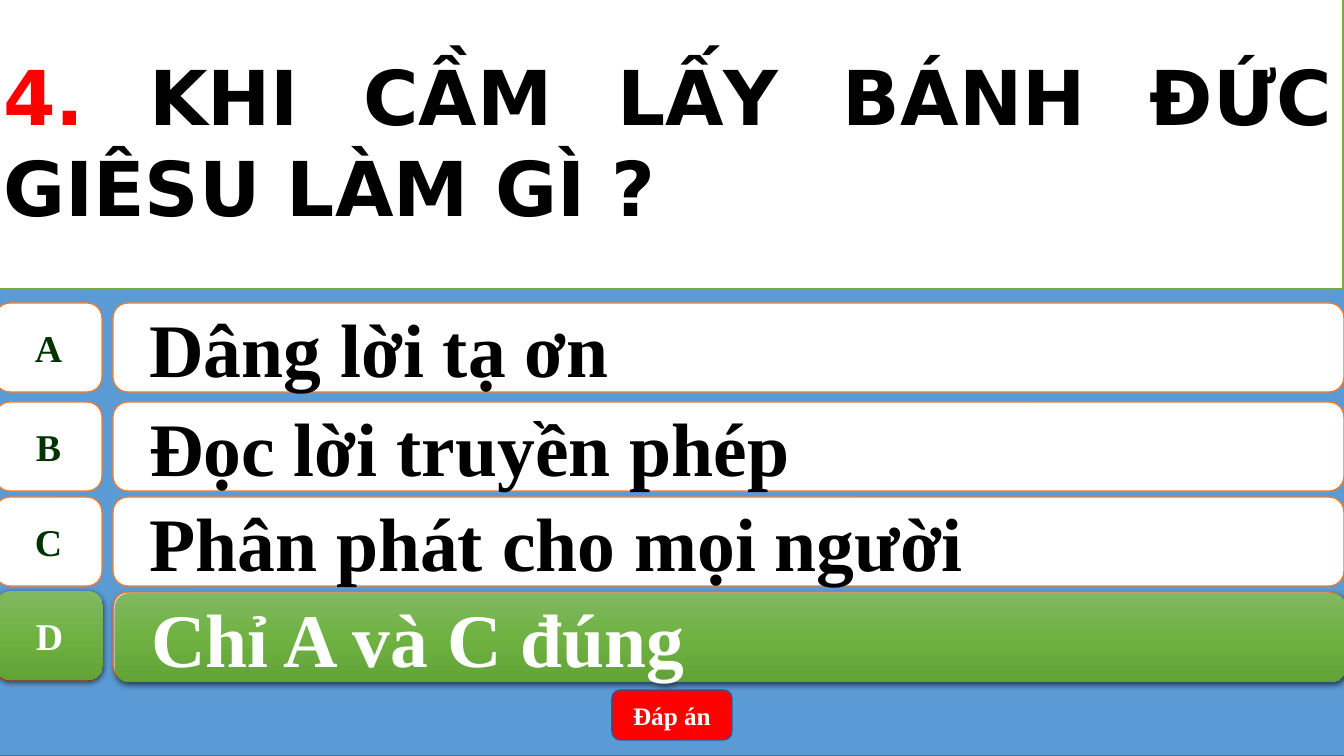
from copy import deepcopy

from lxml.etree import SubElement
from pptx import Presentation
from pptx.dml.color import RGBColor
from pptx.enum.shapes import MSO_SHAPE
from pptx.enum.text import MSO_ANCHOR, MSO_AUTO_SIZE, PP_ALIGN
from pptx.oxml.ns import qn
from pptx.util import Emu, Pt

EMU_PER_PX = 914400 / 100.8
PAGE_WIDTH, PAGE_HEIGHT = 1344, 756

WHITE = RGBColor(0xFF, 0xFF, 0xFF)
BLACK = RGBColor(0x00, 0x00, 0x00)
RED = RGBColor(0xFF, 0x00, 0x00)
BLUE = RGBColor(0x5B, 0x9B, 0xD5)
BLUE_EDGE = RGBColor(0x43, 0x73, 0x9E)
BUTTON_EDGE = RGBColor(0x32, 0x54, 0x91)
ORANGE = RGBColor(0xED, 0x7D, 0x31)
GREEN = RGBColor(0x70, 0xAD, 0x47)
DARK_GREEN = RGBColor(0x00, 0x33, 0x00)
GREEN_STOPS = [
    (0, RGBColor(0x81, 0xB8, 0x61)),
    (0.5, RGBColor(0x6F, 0xB2, 0x42)),
    (1, RGBColor(0x62, 0xA3, 0x36)),
]

SERIF = "Times New Roman"
SANS = "DejaVu Sans"

ROW_HEIGHT = 89
KEY_LEFT, KEY_WIDTH = -5, 107
ANSWER_LEFT, ANSWER_WIDTH = 113, 1231
ANSWERS = [
    ("A", "Dâng lời tạ ơn", 303),
    ("B", "Đọc lời truyền phép", 402),
    ("C", "Phân phát cho mọi người", 497),
    ("D", "Chỉ A và C đúng", 592),
]


def px(length):
    return Emu(round(length * EMU_PER_PX))


def paint(shape, fill, edge):
    shape.fill.solid()
    shape.fill.fore_color.rgb = fill
    shape.line.color.rgb = edge
    shape.line.width = Pt(1)


def add_box(shapes, kind, place, fill, edge):
    box = shapes.add_shape(kind, *map(px, place))
    box.shadow.inherit = False
    paint(box, fill, edge)
    return box


def add_span(para, text, font, size, color):
    span = para.add_run()
    span.text = text
    span.font.name = font
    span.font.size = Pt(size)
    span.font.bold = True
    span.font.color.rgb = color


def write(box, text, size, color, align=PP_ALIGN.CENTER, wrap=True):
    frame = box.text_frame
    frame.word_wrap = wrap
    frame.vertical_anchor = MSO_ANCHOR.MIDDLE
    para = frame.paragraphs[0]
    para.alignment = align
    add_span(para, text, SERIF, size, color)
    return para


def highlight(box):
    """Give the box a green gradient, no outline and a soft shadow below."""
    box.line.fill.background()
    box.fill.gradient()
    box.fill.gradient_angle = 270
    properties = box.element.spPr
    stop_list = properties.find(".//" + qn("a:gsLst"))
    stop_list.append(deepcopy(stop_list[-1]))
    for stop, (position, color) in zip(box.fill.gradient_stops, GREEN_STOPS):
        stop.position = position
        stop.color.rgb = color
    shadow = SubElement(
        properties.find(qn("a:effectLst")), qn("a:outerShdw"),
        blurRad=str(Pt(4.5)), dist=str(Pt(1.5)), dir="5400000", rotWithShape="0")
    black = SubElement(shadow, qn("a:srgbClr"), val="000000")
    SubElement(black, qn("a:alpha"), val="63000")


def add_answer(page, letter, text, top, chosen=False):
    shapes = page.shapes.add_group_shape().shapes
    key_place = (KEY_LEFT, top, KEY_WIDTH, ROW_HEIGHT)
    answer_place = (ANSWER_LEFT, top, ANSWER_WIDTH, ROW_HEIGHT)
    if chosen:
        key_place = (KEY_LEFT + 1, top - 1, KEY_WIDTH, ROW_HEIGHT)
        answer_place = (ANSWER_LEFT + 2, top + 1, ANSWER_WIDTH, ROW_HEIGHT)
    key = add_box(shapes, MSO_SHAPE.FLOWCHART_ALTERNATE_PROCESS, key_place, WHITE, ORANGE)
    write(key, letter, 27, WHITE if chosen else DARK_GREEN, wrap=False)
    answer = add_box(shapes, MSO_SHAPE.ROUNDED_RECTANGLE, answer_place, WHITE, ORANGE)
    para = write(answer, text, 54, WHITE if chosen else BLACK, PP_ALIGN.LEFT)
    para.level = 1
    indents = para._p.get_or_add_pPr()
    indents.set("marL", str(px(50)))
    indents.set("indent", str(px(-28)))
    if chosen:
        highlight(key)
        highlight(answer)


def place_question(page):
    title = page.shapes.title
    title.left, title.top, title.width, title.height = map(px, (-7, -7, 1350, 296))
    paint(title, WHITE, GREEN)
    frame = title.text_frame
    frame.word_wrap = True
    frame.auto_size = MSO_AUTO_SIZE.NONE
    frame.vertical_anchor = MSO_ANCHOR.MIDDLE
    para = frame.paragraphs[0]
    para.alignment = PP_ALIGN.JUSTIFY
    add_span(para, "4. ", SANS, 54, RED)
    add_span(para, "KHI CẦM LẤY BÁNH ĐỨC GIÊSU LÀM GÌ ?", SANS, 54, BLACK)
    # Bring the question in front of the backdrop
    title.element.getparent().append(title.element)


def main():
    deck = Presentation()
    deck.slide_width, deck.slide_height = px(PAGE_WIDTH), px(PAGE_HEIGHT)
    page = deck.slides.add_slide(deck.slide_layouts.get_by_name("Title Only"))

    add_box(page.shapes, MSO_SHAPE.RECTANGLE, (-5, 0, 1350, PAGE_HEIGHT), BLUE, BLUE_EDGE)
    for letter, text, top in ANSWERS:
        add_answer(page, letter, text, top)
    add_answer(page, *ANSWERS[-1], chosen=True)
    button = add_box(page.shapes, MSO_SHAPE.ROUNDED_RECTANGLE, (612, 690, 120, 50), RED, BUTTON_EDGE)
    write(button, "Đáp án", 18, WHITE)
    place_question(page)

    deck.save("out.pptx")


if __name__ == "__main__":
    main()
